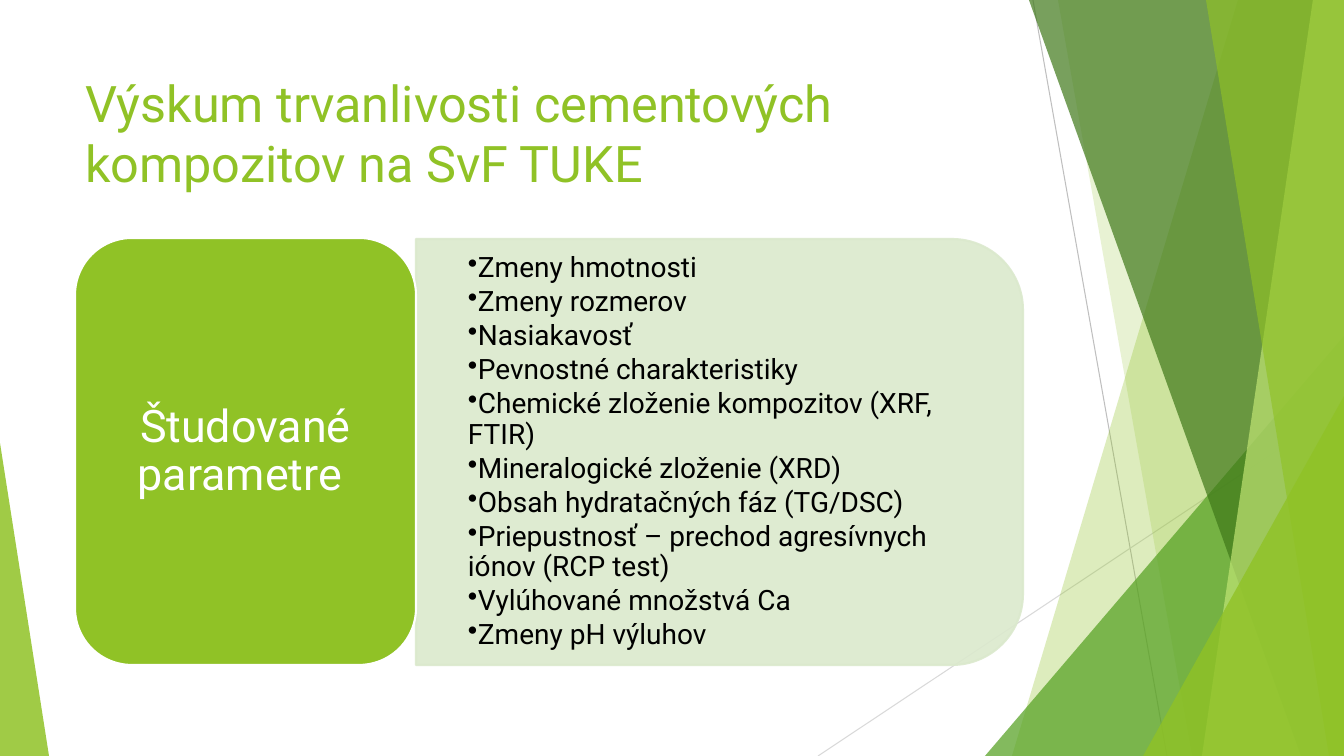
import pptx
import pptx.util
import pptx.dml.color
import pptx.oxml
import pptx.oxml.ns
from dataclasses import dataclass
from pptx.enum.shapes import MSO_CONNECTOR, MSO_SHAPE
from pptx.enum.text import MSO_ANCHOR, PP_ALIGN

TITLE = "Výskum trvanlivosti cementových kompozitov na SvF TUKE"
TOPIC = "Študované parametre "
PARAMETERS = [
    "Zmeny hmotnosti",
    "Zmeny rozmerov",
    "Nasiakavosť",
    "Pevnostné charakteristiky",
    "Chemické zloženie kompozitov (XRF, FTIR)",
    "Mineralogické zloženie (XRD)",
    "Obsah hydratačných fáz (TG/DSC)",
    "Priepustnosť – prechod agresívnych iónov (RCP test)",
    "Vylúhované množstvá Ca",
    "Zmeny pH výluhov",
]


@dataclass(frozen=True)
class Theme:
    font: str = "Roboto"
    title_size: int = 36
    topic_size: int = 32
    item_size: int = 20
    lime: str = "90C226"
    leaf: str = "54A021"
    forest: str = "3F7819"
    pale: str = "C0E474"
    panel: str = "DBE9CD"
    white: str = "FFFFFF"
    black: str = "000000"
    steep_line: str = "BFBFBF"
    shallow_line: str = "D9D9D9"


THEME = Theme()
WIDTH, HEIGHT = 1344, 756
PX = 12192000 / WIDTH

# Lengths in px
RAYS = [((1033, 0), (1167, HEIGHT), THEME.steep_line),
        ((WIDTH, 406), (818, HEIGHT), THEME.shallow_line)]
# Bands reach the right edge: top-left x, bottom-left x, colour, opacity %
# Triangles: left, top, width, apex position, colour, opacity %
FACETS = [
    ("band", (1238, 1012), THEME.lime, 30),
    ("band", (1058, 1192), THEME.lime, 20),
    ("triangle", (985, 336, 359, 1), THEME.leaf, 72),
    ("band", (1029, 1301), THEME.forest, 70),
    ("band", (1313, 1202), THEME.pale, 70),
    ("band", (1206, 1329), THEME.lime, 65),
    ("triangle", (1143, 396, 201, 1), THEME.lime, 80),
    ("triangle", (0, 443, 49, 0), THEME.lime, 85),
]
TITLE_BOX = (75, 67, 948, 145)
TOPIC_BOX = (75, 238, 341, 427)
TOPIC_TEXT_BOX = (92, 255, 307, 394)
PANEL_BOX = (416, 239, 607, 426)
ITEMS_BOX = (416, 260, 586, 384)


def px(length):
    return pptx.util.Emu(round(length * PX))


def rgb(code):
    return pptx.dml.color.RGBColor.from_string(code)


def set_alpha(fill, percent):
    for color in fill._xPr.iter(pptx.oxml.ns.qn("a:srgbClr")):
        color.append(pptx.oxml.parse_xml(
            f'<a:alpha {pptx.oxml.ns.nsdecls("a")} val="{percent * 1000}"/>'))


def paint(shape, color, opacity=100, outline=None):
    """Fill a shape, with an optional 1.5 pt outline."""
    shape.shadow.inherit = False
    shape.fill.solid()
    shape.fill.fore_color.rgb = rgb(color)
    if outline:
        shape.line.color.rgb = rgb(outline)
        shape.line.width = pptx.util.Pt(1.5)
    else:
        shape.line.fill.background()
    if opacity < 100:
        set_alpha(shape.fill, opacity)


def add_ray(slide, start, end, color):
    ray = slide.shapes.add_connector(
        MSO_CONNECTOR.STRAIGHT, *map(px, start + end))
    ray.line.color.rgb = rgb(color)
    ray.line.width = pptx.util.Pt(0.75)
    ray._element.spPr.append(pptx.oxml.parse_xml(
        f'<a:effectLst {pptx.oxml.ns.nsdecls("a")}/>'))


def add_band(slide, top_x, bottom_x):
    outline = slide.shapes.build_freeform(top_x, 0, scale=PX)
    outline.add_line_segments(
        [(WIDTH, 0), (WIDTH, HEIGHT), (bottom_x, HEIGHT)], close=True)
    return outline.convert_to_shape()


def add_triangle(slide, left, top, width, apex):
    """Add a triangle standing on the bottom edge of the slide."""
    triangle = slide.shapes.add_shape(
        MSO_SHAPE.ISOSCELES_TRIANGLE,
        *map(px, (left, top, width, HEIGHT - top)))
    triangle.adjustments[0] = apex
    return triangle


def write(frame, lines, *, size, color, align=PP_ALIGN.LEFT,
          anchor=MSO_ANCHOR.MIDDLE, insets=(10, 5), spacing=1.0,
          after=0, indent=None):
    """Write paragraphs; an indent in px also gives them bullets."""
    frame.word_wrap = True
    frame.auto_size = pptx.enum.text.MSO_AUTO_SIZE.NONE
    frame.vertical_anchor = anchor
    frame.margin_left = frame.margin_right = px(insets[0])
    frame.margin_top = frame.margin_bottom = px(insets[1])
    for index, line in enumerate(lines):
        paragraph = frame.add_paragraph() if index else frame.paragraphs[0]
        paragraph.alignment = align
        paragraph.line_spacing = spacing
        paragraph.space_after = pptx.util.Pt(after)
        run = paragraph.add_run()
        run.text = line
        run.font.name = THEME.font
        run.font.size = pptx.util.Pt(size)
        run.font.color.rgb = rgb(color)
        if indent is not None:
            properties = paragraph._p.get_or_add_pPr()
            properties.set("marL", str(px(indent)))
            properties.set("indent", "0")
            properties.append(pptx.oxml.parse_xml(
                f'<a:buChar {pptx.oxml.ns.nsdecls("a")} char="•"/>'))


def add_background(slide):
    for ray in RAYS:
        add_ray(slide, *ray)
    builders = {"band": add_band, "triangle": add_triangle}
    for kind, geometry, color, opacity in FACETS:
        paint(builders[kind](slide, *geometry), color, opacity)


def add_title(slide):
    title = slide.shapes.title
    title.left, title.top, title.width, title.height = map(px, TITLE_BOX)
    write(title.text_frame, [TITLE], size=THEME.title_size, color=THEME.lime,
          anchor=MSO_ANCHOR.TOP)


def add_parameters(slide):
    left, top, width, height = PANEL_BOX
    # The quarter turn swaps width and height about the same centre
    shift = (width - height) / 2
    panel = slide.shapes.add_shape(
        MSO_SHAPE.ROUND_2_SAME_RECTANGLE,
        *map(px, (left + shift, top - shift, height, width)))
    panel.rotation = 90
    paint(panel, THEME.panel, 90, outline=THEME.panel)
    set_alpha(panel.line.fill, 90)
    items = slide.shapes.add_textbox(*map(px, ITEMS_BOX))
    write(items.text_frame, PARAMETERS, size=THEME.item_size,
          color=THEME.black, insets=(27, 14), spacing=0.9, after=2.75,
          indent=25)


def add_topic(slide):
    card = slide.shapes.add_shape(
        MSO_SHAPE.ROUNDED_RECTANGLE, *map(px, TOPIC_BOX))
    paint(card, THEME.lime, outline=THEME.white)
    label = slide.shapes.add_textbox(*map(px, TOPIC_TEXT_BOX))
    write(label.text_frame, [TOPIC], size=THEME.topic_size,
          color=THEME.white, align=PP_ALIGN.CENTER, insets=(13, 7),
          spacing=0.9)


def main():
    deck = pptx.Presentation()
    deck.slide_width, deck.slide_height = px(WIDTH), px(HEIGHT)
    slide = deck.slides.add_slide(deck.slide_layouts.get_by_name("Title Only"))
    add_background(slide)
    add_title(slide)
    add_parameters(slide)
    add_topic(slide)
    deck.save("out.pptx")


if __name__ == "__main__":
    main()
